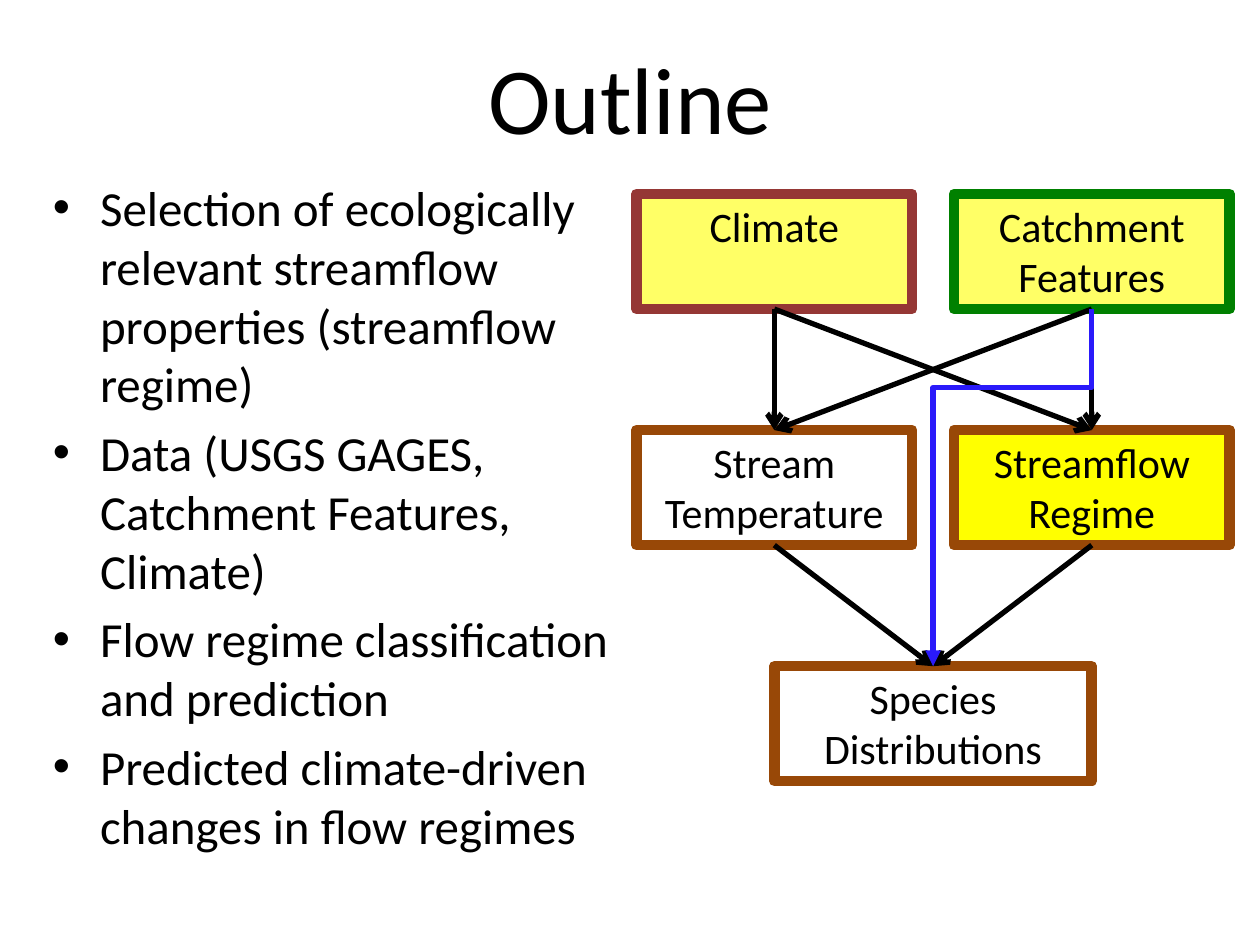
from dataclasses import dataclass

from lxml.etree import SubElement
from pptx import Presentation
from pptx.dml.color import RGBColor
from pptx.enum.shapes import MSO_CONNECTOR as Link, MSO_SHAPE as Preset
from pptx.enum.text import MSO_ANCHOR as Anchor, MSO_AUTO_SIZE as AutoSize, PP_ALIGN as Align
from pptx.oxml.ns import qn
from pptx.util import Cm, Pt


@dataclass(frozen=True)
class Theme:
    font: str = "Calibri"
    ink: str = "000000"
    bypass: str = "2A1AFA"
    pale: str = "FFFF66"
    bright: str = "FFFF00"
    climate: str = "953735"
    catchment: str = "008000"
    response: str = "984807"
    title_size: int = 54
    body_size: int = 28
    box_size: int = 24
    border: int = 6
    arrow: int = 3


class OutlineSlide:
    """Holds the theme and the current slide, and adds each kind of element."""

    def __init__(self, deck, theme):
        self.theme = theme
        self.slide = deck.slides.add_slide(deck.slide_layouts[1])

    def add_text(self, frame, paragraphs, size, align):
        for index, wording in enumerate(paragraphs):
            paragraph = frame.paragraphs[0] if index == 0 else frame.add_paragraph()
            paragraph.alignment = align
            run = paragraph.add_run()
            run.text = wording
            run.font.name = self.theme.font
            run.font.size = Pt(size)
            run.font.color.rgb = RGBColor.from_string(self.theme.ink)

    def fill_placeholder(self, index, area, paragraphs, size, align):
        holder = self.slide.placeholders[index]
        holder.left, holder.top, holder.width, holder.height = map(Cm, area)
        holder.text_frame.auto_size = AutoSize.NONE
        self.add_text(holder.text_frame, paragraphs, size, align)

    def box(self, area, paragraphs, border, fill=None):
        box = self.slide.shapes.add_shape(Preset.RECTANGLE, *map(Cm, area))
        box.shadow.inherit = False
        if fill:
            box.fill.solid()
            box.fill.fore_color.rgb = RGBColor.from_string(fill)
        else:
            box.fill.background()
        box.line.color.rgb = RGBColor.from_string(border)
        box.line.width = Pt(self.theme.border)
        box.text_frame.word_wrap = True
        box.text_frame.vertical_anchor = Anchor.TOP
        self.add_text(box.text_frame, paragraphs, self.theme.box_size, Align.CENTER)
        return box

    def style_link(self, link, color, head):
        link.line.color.rgb = RGBColor.from_string(color)
        link.line.width = Pt(self.theme.arrow)
        properties = link._element.spPr
        SubElement(properties.find(qn("a:ln")), qn("a:tailEnd"), type=head)
        SubElement(properties, qn("a:effectLst"))

    def arrow(self, source, target):
        link = self.slide.shapes.add_connector(
            Link.STRAIGHT,
            source.left + source.width // 2, source.top + source.height,
            target.left + target.width // 2, target.top)
        link.begin_connect(source, 2)
        link.end_connect(target, 0)
        self.style_link(link, self.theme.ink, "arrow")

    def bent_arrow(self, source, target, bend):
        """Route down, left and down again, as an elbow turned by a quarter."""
        start_x, start_y = source.left + source.width // 2, source.top + source.height
        end_x, end_y = target.left + target.width // 2, target.top
        drop, shift = end_y - start_y, start_x - end_x
        left = (start_x + end_x - drop) // 2
        top = (start_y + end_y - shift) // 2
        link = self.slide.shapes.add_connector(
            Link.ELBOW, left, top, left + drop, top + shift)
        properties = link._element.spPr
        properties.find(qn("a:xfrm")).set("rot", str(90 * 60000))
        adjustments = properties.find(qn("a:prstGeom")).find(qn("a:avLst"))
        SubElement(adjustments, qn("a:gd"), name="adj1", fmla=f"val {round(bend * 100000)}")
        self.style_link(link, self.theme.bypass, "triangle")


def main():
    deck = Presentation()
    deck.slide_width, deck.slide_height = Cm(25.4), Cm(19.05)
    theme = Theme()
    outline = OutlineSlide(deck, theme)

    outline.fill_placeholder(
        0, (1.27, 0.36, 22.86, 3.18), ["Outline"], theme.title_size, Align.CENTER)
    outline.fill_placeholder(1, (0.81, 3.45, 12.01, 14.3), [
        "Selection of ecologically relevant streamflow properties (streamflow regime)",
        "Data (USGS GAGES, Catchment Features, Climate)",
        "Flow regime classification and prediction",
        "Predicted climate-driven changes in flow regimes",
    ], theme.body_size, Align.LEFT)

    width, height = 5.56, 2.32
    left, right = 12.83, 19.23
    drivers, responses, outcome = (3.91 + 4.76 * row for row in range(3))
    climate = outline.box(
        (left, drivers, width, height), ["Climate"], theme.climate, theme.pale)
    temperature = outline.box(
        (left, responses, width, height), ["Stream", "Temperature"], theme.response)
    catchment = outline.box(
        (right, drivers, width, height), ["Catchment", "Features"],
        theme.catchment, theme.pale)
    species = outline.box(
        (left + width / 2, outcome, right - left, height),
        ["Species Distributions"], theme.response)
    regime = outline.box(
        (right, responses, width, height), ["Streamflow Regime"],
        theme.response, theme.bright)

    for source, target in (
        (climate, temperature), (catchment, temperature),
        (climate, regime), (catchment, regime),
        (regime, species), (temperature, species),
    ):
        outline.arrow(source, target)
    outline.bent_arrow(catchment, species, 0.22)

    deck.save("out.pptx")


if __name__ == "__main__":
    main()
